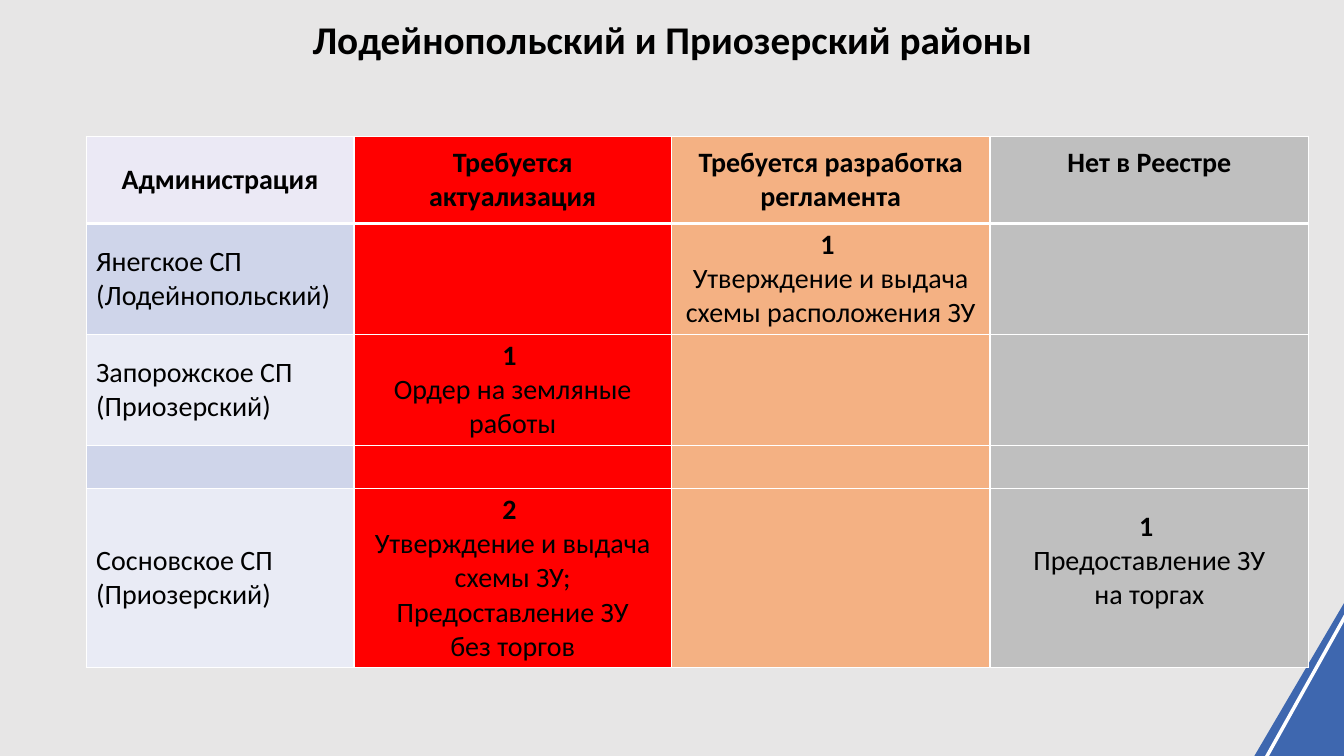
from dataclasses import dataclass
from pptx import Presentation
from pptx.dml.color import RGBColor
from pptx.enum.text import MSO_ANCHOR as Anchor, MSO_AUTO_SIZE as Fit, PP_ALIGN as Align
from pptx.oxml.ns import qn
from pptx.util import Cm, Pt
from lxml.etree import SubElement

WHITE = "FFFFFF"
COLS = [6.75, 8.0, 8.03, 8.03]
FILLS = ["", "FF0000", "F4B183", "BFBFBF"]
HEAD = "EBE9F5"
BANDS = ["E9EBF5", "CFD5EA"]
PAD, LIFT = 0.1, 0.96


@dataclass
class Cell:
    lines: tuple[str, ...] = ()
    lead: bool = False   # first line bold
    bold: bool = False   # every line bold
    left: bool = False
    lift: float = PAD    # bottom margin


@dataclass
class Row:
    high: float
    cells: list[Cell]


@dataclass
class Patch:
    points: list[tuple[float, float]]
    fill: str = ""
    line: str = ""


# Corner band and its white edge, both running past the slide's edge
PATCHES = [
    Patch([(37.87, 8.38), (31.09, 19.94), (33.02, 22.56), (36.78, 12.29)], fill="3E67AF"),
    Patch([(31.39, 20.02), (37.59, 8.92), (33.38, 22.38)], line=WHITE),
]


def color(code: str) -> RGBColor:
    return RGBColor.from_string(code)


def paint(fill, code: str) -> None:
    if code:
        fill.solid()
        fill.fore_color.rgb = color(code)
    else:
        fill.background()


def write(frame, lines, size=20, bold=False, lead=False, align=Align.CENTER) -> None:
    for i, line in enumerate(lines):
        para = frame.paragraphs[0] if i == 0 else frame.add_paragraph()
        para.text = line
        para.alignment = align
        for run in para.runs:
            font = run.font
            font.name, font.size = "Calibri", Pt(size)
            font.bold = bold or (lead and i == 0)
            font.color.rgb = color("000000")


def border(cell, base: float) -> None:
    props = cell._tc.get_or_add_tcPr()
    for side, width in zip("LRTB", (1, 1, 1, base)):
        line = SubElement(props, qn(f"a:ln{side}"), w=str(Pt(width)))
        SubElement(SubElement(line, qn("a:solidFill")), qn("a:srgbClr"), val=WHITE)


def draw(slide, patch: Patch) -> None:
    first, *rest = [(Cm(x), Cm(y)) for x, y in patch.points]
    build = slide.shapes.build_freeform(*first)
    build.add_line_segments(rest)
    shape = build.convert_to_shape()
    shape.shadow.inherit = False
    paint(shape.fill, patch.fill)
    paint(shape.line.fill, patch.line)
    if patch.line:
        shape.line.width = Pt(2.5)


def grid(slide, rows: list[Row]) -> None:
    table = slide.shapes.add_table(
        len(rows), len(COLS), Cm(2.17), Cm(3.43),
        Cm(sum(COLS)), Cm(sum(row.high for row in rows))).table
    for col, width in zip(table.columns, COLS):
        col.width = Cm(width)
    for r, row in enumerate(rows):
        table.rows[r].height = Cm(row.high)
        for c, item in enumerate(row.cells):
            cell = table.cell(r, c)
            border(cell, 1 if r else 3)
            paint(cell.fill, FILLS[c] or (BANDS[r % 2] if r else HEAD))
            cell.vertical_anchor = Anchor.MIDDLE
            cell.margin_top, cell.margin_bottom = Cm(PAD), Cm(item.lift)
            write(cell.text_frame, item.lines, bold=item.bold, lead=item.lead,
                  align=Align.LEFT if item.left else Align.CENTER)


def head(*lines: str, lift: float = PAD) -> Cell:
    return Cell(lines, bold=True, lift=lift)


def place(*lines: str) -> Cell:
    return Cell(lines, left=True)


def count(*lines: str, lift: float = PAD) -> Cell:
    return Cell(lines, lead=True, lift=lift)


ROWS = [
    Row(2.2, [head("Администрация"), head("Требуется", "актуализация"),
              head("Требуется разработка регламента"),
              head("Нет в Реестре", lift=LIFT)]),
    Row(2.8, [place("Янегское СП (Лодейнопольский)"), Cell(),
              count("1 ", "Утверждение и выдача схемы расположения ЗУ"), Cell()]),
    Row(2.8, [place("Запорожское СП", "(Приозерский)"),
              count("1 ", "Ордер на земляные работы"), Cell(), Cell()]),
    Row(1.08, [Cell()] * 4),
    Row(4.51, [place("Сосновское СП", "(Приозерский)"),
               count("2 ", "Утверждение и выдача схемы ЗУ; Предоставление ЗУ\vбез торгов"),
               Cell(), count("1 ", "Предоставление ЗУ\vна торгах", lift=LIFT)]),
]


def main() -> None:
    deck = Presentation()
    deck.slide_width, deck.slide_height = Cm(33.87), Cm(19.05)
    slide = deck.slides.add_slide(deck.slide_layouts[6])
    paint(slide.background.fill, "E7E6E6")

    # Corner and table
    for patch in PATCHES:
        draw(slide, patch)
    grid(slide, ROWS)

    # Title
    frame = slide.shapes.add_textbox(Cm(7.54), Cm(0.25), Cm(18.8), Cm(1.45)).text_frame
    frame.word_wrap = False
    frame.auto_size = Fit.SHAPE_TO_FIT_TEXT
    write(frame, ["Лодейнопольский и Приозерский районы"], size=28, bold=True)
    deck.save("out.pptx")


if __name__ == "__main__":
    main()
